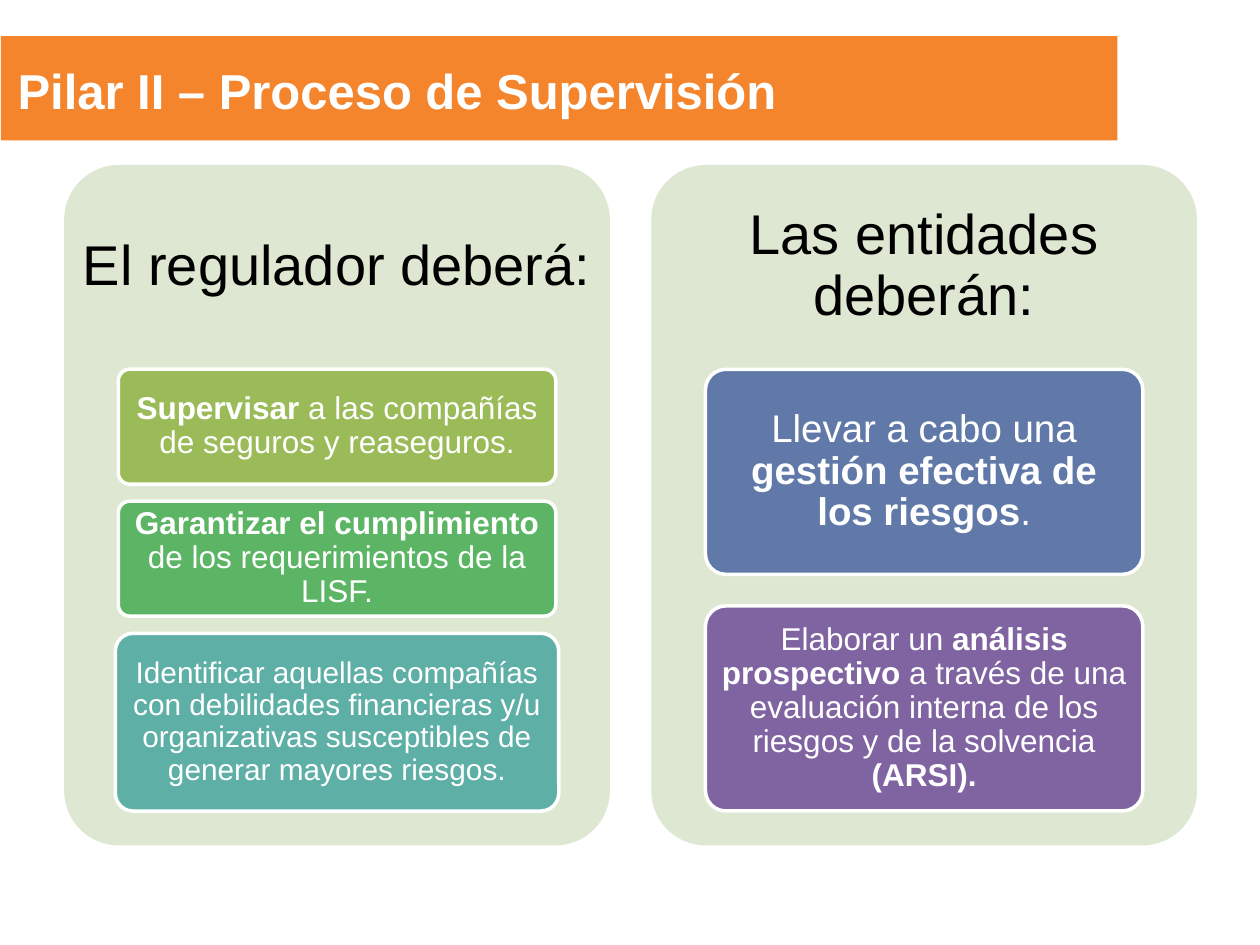
from pptx import Presentation
from pptx.dml.color import RGBColor
from pptx.enum.shapes import MSO_SHAPE
from pptx.enum.text import MSO_ANCHOR, MSO_AUTO_SIZE, PP_ALIGN
from pptx.util import Pt

RECTANGLE = MSO_SHAPE.RECTANGLE
ROUNDED = MSO_SHAPE.ROUNDED_RECTANGLE
MIDDLE = MSO_ANCHOR.MIDDLE
CENTER = PP_ALIGN.CENTER
GROW = MSO_AUTO_SIZE.SHAPE_TO_FIT_TEXT

PANEL_TOP, PANEL_WIDTH, PANEL_HEIGHT = 94.3, 311.8, 388.8
PANEL_LEFT, PANEL_PITCH = 36.7, 335.5
HEADING_HEIGHT = 116.6

PANELS = [
    ("El regulador deberá:", [
        (211, 250, 65.7, "9BBB59", 18,
         [("Supervisar", True), (" a las compañías de seguros y reaseguros.", False)]),
        (286.4, 250, 65.7, "5CB565", 18,
         [("Garantizar el cumplimiento ", True),
          ("de los requerimientos de la LISF.", False)]),
        (361.9, 253.4, 101.6, "5EAFA6", 17,
         [("Identificar aquellas compañías con debilidades financieras y/u "
           "organizativas susceptibles de generar mayores riesgos.", False)]),
    ]),
    ("Las entidades deberán:", [
        (211, 250, 117.2, "6179A8", 22,
         [("Llevar a cabo una ", False), ("gestión efectiva de los riesgos", True),
          (".", False)]),
        (346.2, 250, 117.2, "8064A2", 18,
         [("Elaborar un ", False), ("análisis prospectivo ", True),
          ("a través de una evaluación interna de los riesgos y de la solvencia ", False),
          ("(ARSI).", True)]),
    ]),
]


def color(value):
    return RGBColor.from_string(value)


class SlideBuilder:
    font_name = "Arial"
    white = "FFFFFF"
    black = "000000"
    orange = "F5852C"
    panel_fill = "DEE7D1"

    def __init__(self, slide):
        self.slide = slide

    def block(self, kind, left, top, width, height, fill, outlined=False):
        shape = self.slide.shapes.add_shape(kind, Pt(left), Pt(top), Pt(width), Pt(height))
        shape.shadow.inherit = False
        shape.fill.solid()
        shape.fill.fore_color.rgb = color(fill)
        if kind == ROUNDED:
            shape.adjustments[0] = 0.1
        if outlined:
            shape.line.color.rgb = color(self.white)
            shape.line.width = Pt(2)
        else:
            shape.line.fill.background()
        return shape

    def add_runs(self, paragraph, runs, size, font_color):
        for text, bold in runs:
            run = paragraph.add_run()
            run.text = text
            run.font.name = self.font_name
            run.font.size = Pt(size)
            run.font.bold = bold
            run.font.color.rgb = color(font_color)

    def centered_text(self, shape, runs, size, font_color, inset_x, inset_y):
        frame = shape.text_frame
        frame.word_wrap = True
        frame.vertical_anchor = MIDDLE
        frame.margin_left = frame.margin_right = Pt(inset_x)
        frame.margin_top = frame.margin_bottom = Pt(inset_y)
        paragraph = frame.paragraphs[0]
        paragraph.alignment = CENTER
        paragraph.line_spacing = 0.9
        self.add_runs(paragraph, runs, size, font_color)

    def text_box(self, left, top, width, height):
        return self.slide.shapes.add_textbox(Pt(left), Pt(top), Pt(width), Pt(height))

    def title(self, text):
        self.block(RECTANGLE, 0.5, 20.7, 638, 59.6, self.orange)
        frame = self.text_box(3, 31, 617, 41).text_frame
        frame.word_wrap = True
        frame.auto_size = GROW
        self.add_runs(frame.paragraphs[0], [(text, True)], 28, self.white)

    def card(self, center, top, width, height, fill, size, runs):
        shape = self.block(ROUNDED, center - width / 2, top, width, height, fill, True)
        self.centered_text(shape, runs, size, self.white, 0.2 * size, 0.15 * size)

    def panel(self, left, heading, cards):
        self.block(ROUNDED, left, PANEL_TOP, PANEL_WIDTH, PANEL_HEIGHT, self.panel_fill)
        heading_box = self.text_box(left, PANEL_TOP, PANEL_WIDTH, HEADING_HEIGHT)
        self.centered_text(heading_box, [(heading, False)], 32, self.black, 9.6, 9.6)
        for card in cards:
            self.card(left + PANEL_WIDTH / 2, *card)


def main():
    presentation = Presentation()
    presentation.slide_width = Pt(720)
    presentation.slide_height = Pt(540)
    slide = presentation.slides.add_slide(presentation.slide_layouts[6])
    builder = SlideBuilder(slide)
    builder.title("Pilar II – Proceso de Supervisión")
    for index, (heading, cards) in enumerate(PANELS):
        builder.panel(PANEL_LEFT + index * PANEL_PITCH, heading, cards)
    presentation.save("out.pptx")


if __name__ == "__main__":
    main()
